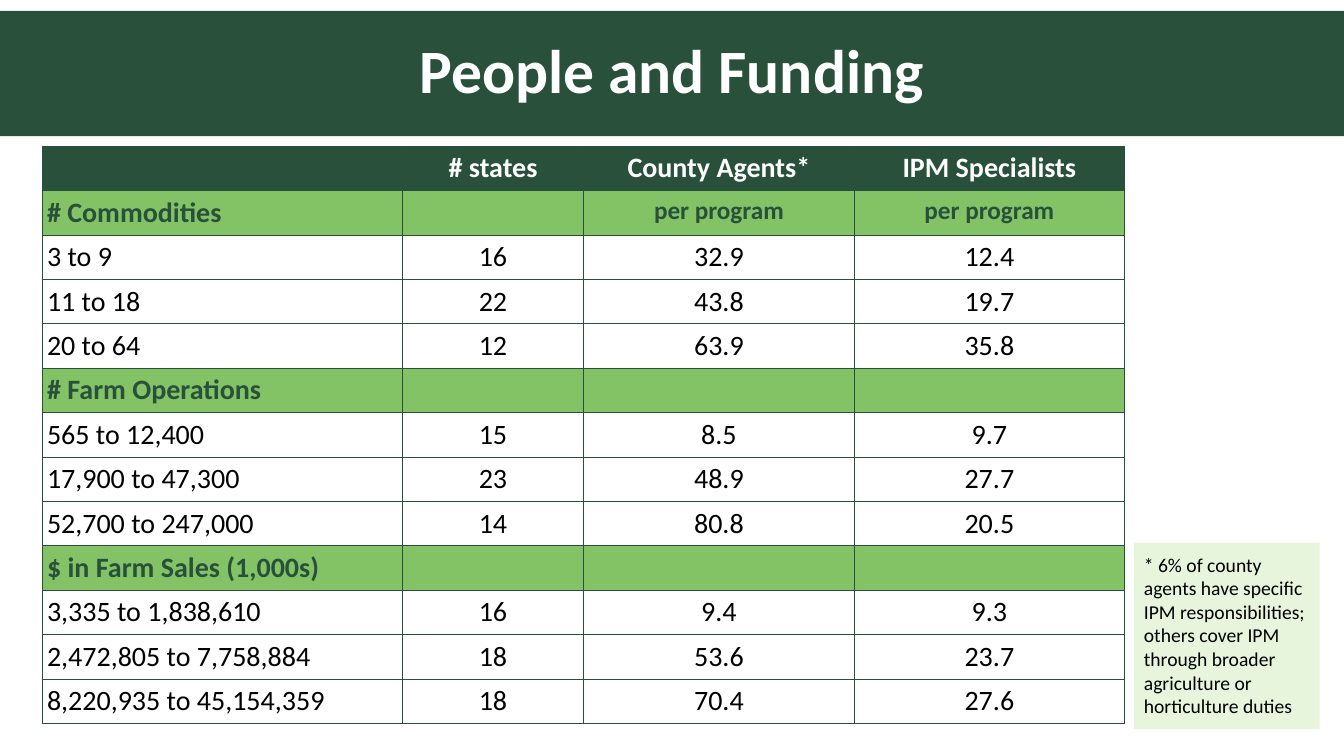
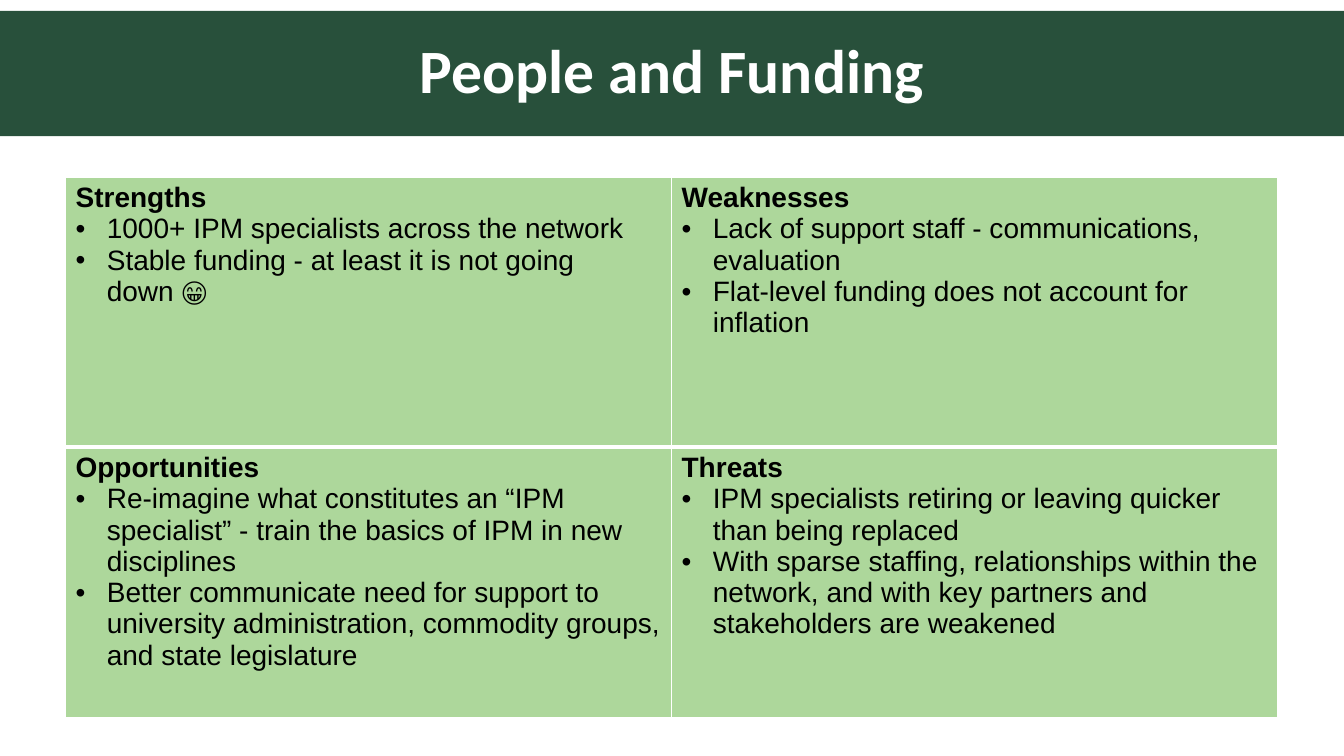
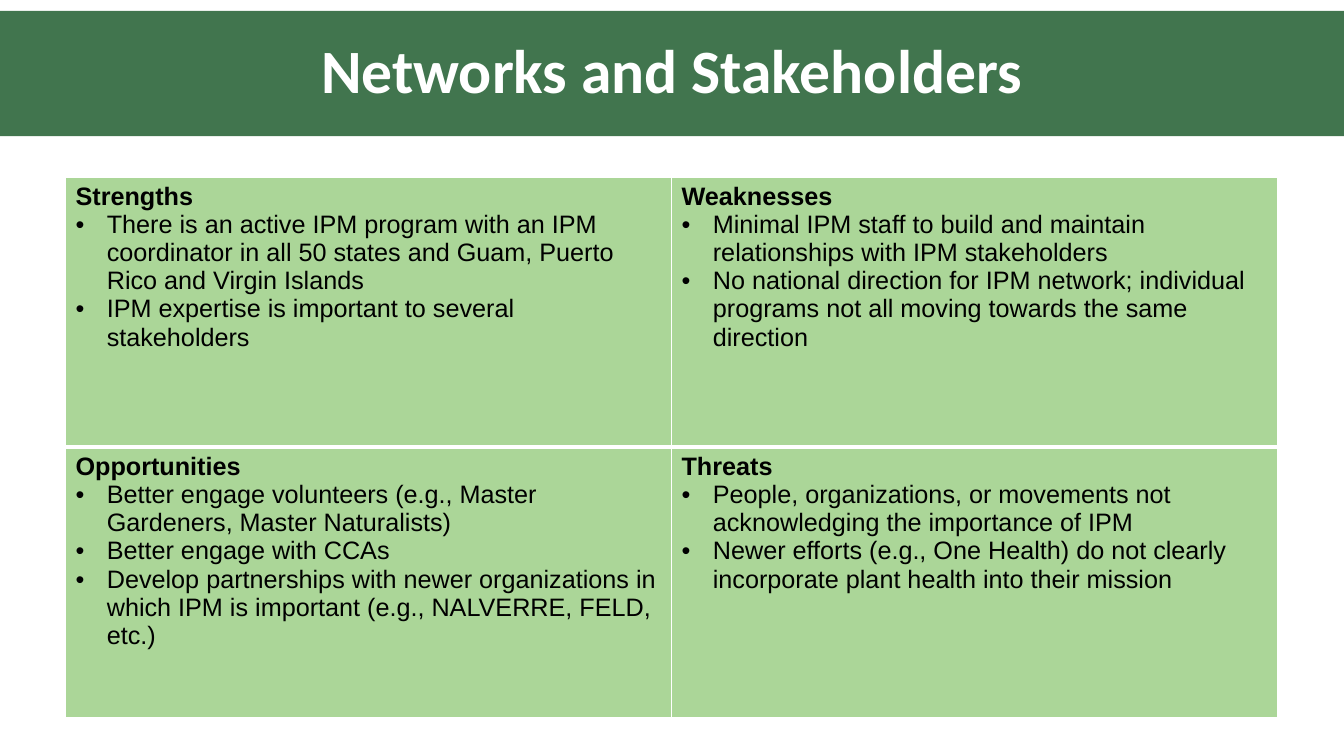
from dataclasses import dataclass
from itertools import accumulate

from lxml.etree import SubElement
from pptx import Presentation
from pptx.dml.color import RGBColor
from pptx.enum.shapes import MSO_SHAPE
from pptx.enum.text import MSO_ANCHOR, PP_ALIGN
from pptx.oxml import parse_xml
from pptx.oxml.ns import nsdecls, qn
from pptx.util import Inches, Pt


@dataclass(frozen=True)
class Theme:
    dark: str = "28503B"
    forest: str = "41754E"
    leaf: str = "83C366"
    sage: str = "86C46B"
    lime: str = "63BF1F"
    white: str = "FFFFFF"
    black: str = "000000"
    head: str = "Calibri"
    body: str = "Arial"
    title: int = 44
    large: int = 20
    mid: int = 18
    small: int = 14


class Deck:
    COLS, ROWS = 160, 90

    def __init__(self, theme):
        self.theme = theme
        self.prs = Presentation()
        self.prs.slide_width = Inches(13.333)
        self.prs.slide_height = Inches(7.5)
        self.slide = None

    def x(self, cols):
        return round(self.prs.slide_width * cols / self.COLS)

    def y(self, rows):
        return round(self.prs.slide_height * rows / self.ROWS)

    def box(self, left, top, width, height):
        return self.x(left), self.y(top), self.x(width), self.y(height)

    def paint(self, item, color, share=100):
        item.fill.solid()
        item.fill.fore_color.rgb = RGBColor.from_string(color)
        if share < 100:
            node = item.fill._xPr.find(qn("a:solidFill"))[0]
            SubElement(node, qn("a:alpha"), val=str(share * 1000))

    def label(self, para, text, size, font, color, bold=False, align=PP_ALIGN.LEFT):
        para.text = text
        para.alignment = align
        para.font.size = Pt(size)
        para.font.name = font
        para.font.bold = bold
        para.font.color.rgb = RGBColor.from_string(color)

    def bullet(self, para):
        props = para._p.get_or_add_pPr()
        props.set("marL", str(Inches(0.31)))
        props.set("indent", str(-Inches(0.31)))
        SubElement(props, qn("a:buFont"), typeface="Arial")
        SubElement(props, qn("a:buChar"), char="•")

    def edges(self, cell, color, left, right, top, bottom):
        props = cell._tc.get_or_add_tcPr()
        for i, (side, width) in enumerate(zip("LRTB", (left, right, top, bottom))):
            props.insert(i, parse_xml(
                f'<a:ln{side} {nsdecls("a")} w="{Pt(width)}"><a:solidFill>'
                f'<a:srgbClr val="{color}"/></a:solidFill></a:ln{side}>'))

    def panel(self, area, color, share=100):
        shape = self.slide.shapes.add_shape(MSO_SHAPE.RECTANGLE, *self.box(*area))
        shape.shadow.inherit = False
        shape.line.fill.background()
        self.paint(shape, color, share)
        shape.text_frame.word_wrap = True
        return shape.text_frame

    def start(self, title, color):
        t = self.theme
        self.slide = self.prs.slides.add_slide(self.prs.slide_layouts[6])
        frame = self.panel((0, 1.3, self.COLS, 14.9), color)
        frame.vertical_anchor = MSO_ANCHOR.MIDDLE
        para = frame.paragraphs[0]
        self.label(para, title, t.title, t.head, t.white, True, PP_ALIGN.CENTER)
        para.line_spacing = 0.9

    def grid(self, left, top, cols, rows):
        area = self.box(left, top, sum(cols), sum(rows))
        table = self.slide.shapes.add_table(len(rows), len(cols), *area).table
        table.first_row = table.horz_banding = False
        for col, width in zip(table.columns, cols):
            col.width = self.x(width)
        for row, height in zip(table.rows, rows):
            row.height = self.y(height)
        return table

    def data(self, left, top, cols, height, groups):
        t = self.theme
        lines = [line for group in groups for line in group]
        starts = set(accumulate(len(group) for group in groups[:-1]))
        table = self.grid(left, top, cols, [height] * len(lines))
        for r, line in enumerate(lines):
            fill, ink = t.white, t.black
            if r == 0:
                fill, ink = t.dark, t.white
            elif r in starts:
                fill, ink = t.leaf, t.dark
            for c, text in enumerate(line):
                cell = table.cell(r, c)
                cell.margin_left = cell.margin_right = Inches(0.05)
                self.paint(cell, fill)
                self.edges(cell, t.dark, 0.75, 0.75, 0.75, 0.75)
                if text:
                    size = t.mid if r in starts and c else t.large
                    align = PP_ALIGN.CENTER if c else PP_ALIGN.LEFT
                    self.label(cell.text_frame.paragraphs[0], text, size,
                               t.head, ink, fill != t.white, align)

    def swot(self, color, size, *lists):
        t = self.theme
        names = "Strengths", "Weaknesses", "Opportunities", "Threats"
        table = self.grid(7.8, 21.1, [72.15] * 2, [32.15] * 2)
        for i, (name, points) in enumerate(zip(names, lists)):
            row, col = divmod(i, 2)
            cell = table.cell(row, col)
            self.paint(cell, color, 67)
            self.edges(cell, t.white, 1, 1, 3 if row else 1, 1 if row else 3)
            frame = cell.text_frame
            self.label(frame.paragraphs[0], name, size, t.body, t.black, True)
            for point in points:
                para = frame.add_paragraph()
                self.bullet(para)
                self.label(para, point, size, t.body, t.black)

    def note(self, area, text):
        t = self.theme
        frame = self.panel(area, t.lime, 15)
        frame.margin_top = frame.margin_bottom = Inches(0.1)
        frame.vertical_anchor = MSO_ANCHOR.TOP
        self.label(frame.paragraphs[0], text, t.small, t.head, t.black)


def main():
    theme = Theme()
    deck = Deck(theme)

    deck.start("People and Funding", theme.dark)
    deck.data(5, 17.4, [42.9, 21.6, 32.2, 32.2], 5.28, [
        [("", "# states", "County Agents*", "IPM Specialists")],
        [("# Commodities", "", "per program", "per program"),
         ("3 to 9", "16", "32.9", "12.4"),
         ("11 to 18", "22", "43.8", "19.7"),
         ("20 to 64", "12", "63.9", "35.8")],
        [("# Farm Operations", "", "", ""),
         ("565 to 12,400", "15", "8.5", "9.7"),
         ("17,900 to 47,300", "23", "48.9", "27.7"),
         ("52,700 to 247,000", "14", "80.8", "20.5")],
        [("$ in Farm Sales (1,000s)", "", "", ""),
         ("3,335 to 1,838,610", "16", "9.4", "9.3"),
         ("2,472,805 to 7,758,884", "18", "53.6", "23.7"),
         ("8,220,935 to 45,154,359", "18", "70.4", "27.6")],
    ])
    deck.note((135, 64.6, 22.1, 22.2),
              "* 6% of county agents have specific IPM responsibilities; "
              "others cover IPM through broader agriculture or horticulture duties")

    deck.start("People and Funding", theme.dark)
    deck.swot(
        theme.sage, theme.large,
        ["1000+ IPM specialists across the network",
         "Stable funding - at least it is not going down 😁"],
        ["Lack of support staff - communications, evaluation",
         "Flat-level funding does not account for inflation"],
        ["Re-imagine what constitutes an “IPM specialist” - train the basics "
         "of IPM in new disciplines",
         "Better communicate need for support to university administration, "
         "commodity groups, and state legislature"],
        ["IPM specialists retiring or leaving quicker than being replaced",
         "With sparse staffing, relationships within the network, and with "
         "key partners and stakeholders are weakened"])

    deck.start("Networks and Stakeholders", theme.forest)
    deck.swot(
        theme.leaf, theme.mid,
        ["There is an active IPM program with an IPM coordinator in all 50 "
         "states and Guam, Puerto Rico and Virgin Islands",
         "IPM expertise is important to several stakeholders"],
        ["Minimal IPM staff to build and maintain relationships with IPM "
         "stakeholders",
         "No national direction for IPM network; individual programs not all "
         "moving towards the same direction"],
        ["Better engage volunteers (e.g., Master Gardeners, Master Naturalists)",
         "Better engage with CCAs",
         "Develop partnerships with newer organizations in which IPM is "
         "important (e.g., NALVERRE, FELD, etc.)"],
        ["People, organizations, or movements not acknowledging the "
         "importance of IPM",
         "Newer efforts (e.g., One Health) do not clearly incorporate plant "
         "health into their mission"])

    deck.prs.save("out.pptx")


if __name__ == "__main__":
    main()
